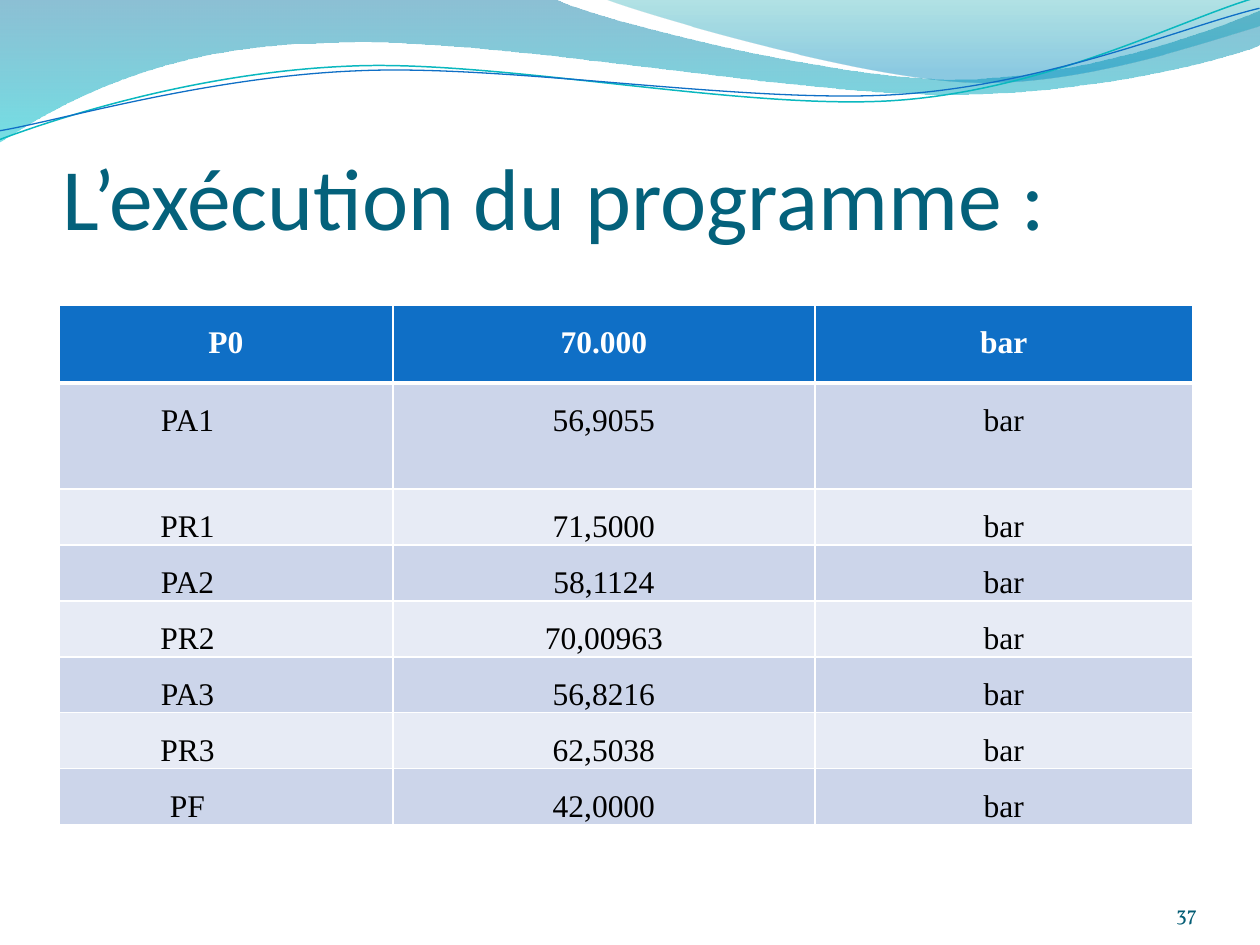
import pptx
import pptx.util
from pptx.dml.color import RGBColor
from pptx.enum.text import MSO_ANCHOR, PP_ALIGN
from pptx.oxml.ns import qn
from lxml import etree

PX = 914400 // 126

WHITE = RGBColor(0xFF, 0xFF, 0xFF)
BLACK = RGBColor(0, 0, 0)
BLUE = RGBColor(0x0F, 0x6F, 0xC6)
TURQUOISE = RGBColor(0x0A, 0xB8, 0xBF)
TITLE_TEAL = RGBColor(0x04, 0x61, 0x7B)
NUMBER_TEAL = RGBColor(0x04, 0x5D, 0x75)
BAND_DARK = RGBColor(0xCC, 0xD5, 0xEA)
BAND_LIGHT = RGBColor(0xE7, 0xEB, 0xF5)
OCEAN = RGBColor(0x00, 0x74, 0xA1)
CYAN = RGBColor(0x00, 0xC6, 0xCF)
LAGOON = RGBColor(0x00, 0xA1, 0xA9)
SKY = RGBColor(0x00, 0x8B, 0xBF)

deck = pptx.Presentation()
deck.slide_width = 1260 * PX
deck.slide_height = 945 * PX
page = deck.slides.add_slide(deck.slide_layouts[6])


def add_outline(start, parts, closed):
    """Pairs are straight segments; groups of six are cubic curves."""
    points = [pair for part in parts for pair in zip(part[::2], part[1::2])]
    builder = page.shapes.build_freeform(*start, scale=PX)
    builder.add_line_segments(points, close=closed)
    shape = builder.convert_to_shape()
    shape.shadow.inherit = False
    segments = iter(list(shape._element.iter(qn("a:lnTo"))))
    for part in parts:
        segment = next(segments)
        if len(part) == 6:
            segment.tag = qn("a:cubicBezTo")
            for _ in range(2):
                control = next(segments)
                segment.append(control[0])
                control.getparent().remove(control)
    return shape


def write_text(frame, text, align, font):
    para = frame.paragraphs[0]
    para.alignment = align
    span = para.add_run()
    span.text = text
    span.font.color.rgb = font["color"]
    for key in ("name", "size", "bold"):
        setattr(span.font, key, font[key])
    return para


# Translucent waves: start, outline, gradient stops (position, colour, opacity %)
waves = [
    ((0, 0),
     [(554, -1), (600, 21, 837, 79, 955, 79), (1075, 79, 1207, 33, 1260, 11),
      (1261, 45), (1239, 55, 1096, 96, 940, 94), (784, 94, 481, 35, 324, 43),
      (161, 45, 58, 105, -1, 142)],
     [(0, OCEAN, 45), (1, CYAN, 55)]),
    ((604, -1),
     [(641, 14, 859, 78, 969, 82), (1079, 87, 1211, 40, 1260, 26), (1260, 0)],
     [(0, LAGOON, 30), (0.8, SKY, 45)]),
]
for start, parts, stops in waves:
    wave = add_outline(start, parts, True)
    wave.line.fill.background()
    wave.fill.gradient()
    wave.fill.gradient_angle = 270
    for stop, (position, color, opacity) in zip(wave.fill.gradient_stops, stops):
        stop.position = position
        stop.color.rgb = color
    colors = wave._element.spPr.iter(qn("a:srgbClr"))
    for color_node, (position, color, opacity) in zip(colors, stops):
        etree.SubElement(color_node, qn("a:alpha"), val=str(opacity * 1000))

# Thin wave lines, drawn level and then tilted
wave_lines = [
    ((-3, 110), [(59, 90, 200, 52, 350, 53), (499, 53, 745, 117, 896, 113),
                 (1049, 109, 1184, 45, 1260, 27)], TURQUOISE, 0.85),
    ((-2, 101), [(57, 94, 207, 57, 357, 58), (509, 58, 750, 111, 902, 107),
                 (1052, 103, 1188, 52, 1262, 38)], BLUE, 0.75),
]
for start, parts, color, width in wave_lines:
    curve = add_outline(start, parts, False)
    curve.rotation = 357.3
    curve.fill.background()
    curve.line.color.rgb = color
    curve.line.width = pptx.util.Pt(width)

# Title and page number
labels = [
    ("L’exécution du programme :", (63, 97, 1134, 157), 6, PP_ALIGN.LEFT,
     {"name": "Calibri", "size": pptx.util.Pt(50), "bold": False, "color": TITLE_TEAL}),
    ("37", (1092, 876, 105, 50), 0, PP_ALIGN.RIGHT,
     {"name": "Vollkorn", "size": pptx.util.Pt(12), "bold": False, "color": NUMBER_TEAL}),
]
for text, place, inset, align, font in labels:
    box = page.shapes.add_textbox(*(length * PX for length in place))
    frame_format = {"word_wrap": True, "vertical_anchor": MSO_ANCHOR.BOTTOM,
                    "margin_left": 0, "margin_right": 0,
                    "margin_top": inset * PX, "margin_bottom": inset * PX}
    for key, value in frame_format.items():
        setattr(box.text_frame, key, value)
    write_text(box.text_frame, text, align, font)

# Pressure table
pressures = [("P0", "70.000"), ("PA1", "56,9055"), ("PR1", "71,5000"),
             ("PA2", "58,1124"), ("PR2", "70,00963"), ("PA3", "56,8216"),
             ("PR3", "62,5038"), ("PF", "42,0000")]
widths = [334, 422, 378]
heights = [78, 106] + [56] * 6
table = page.shapes.add_table(len(heights), len(widths), 59 * PX, 305 * PX,
                              sum(widths) * PX, sum(heights) * PX).table
table.first_row = False
table.horz_banding = False
for column, width in zip(table.columns, widths):
    column.width = width * PX
for row, height in zip(table.rows, heights):
    row.height = height * PX

for r, pressure in enumerate(pressures):
    header = r == 0
    fill_color = BLUE if header else (BAND_LIGHT, BAND_DARK)[r % 2]
    font = {"name": "Times New Roman", "size": pptx.util.Pt(18),
            "bold": header, "color": WHITE if header else BLACK}
    for c, text in enumerate((*pressure, "bar")):
        cell = table.cell(r, c)
        name_cell = c == 0 and not header
        margins = {"margin_left": 0, "margin_right": 77 * PX if name_cell else 0,
                   "margin_top": 33 * PX, "margin_bottom": 0}
        for key, value in margins.items():
            setattr(cell, key, value)
        para = write_text(cell.text_frame, text, PP_ALIGN.CENTER, font)
        para.line_spacing = pptx.util.Pt(12.8)
        for side in "LRTB":
            under_header = (r, side) in ((0, "B"), (1, "T"))
            border = etree.SubElement(cell._tc.get_or_add_tcPr(), qn("a:ln" + side),
                                      w=str(pptx.util.Pt(3 if under_header else 1)))
            paint = etree.SubElement(border, qn("a:solidFill"))
            etree.SubElement(paint, qn("a:srgbClr"), val=str(WHITE))
        cell.fill.solid()
        cell.fill.fore_color.rgb = fill_color

deck.save("out.pptx")
